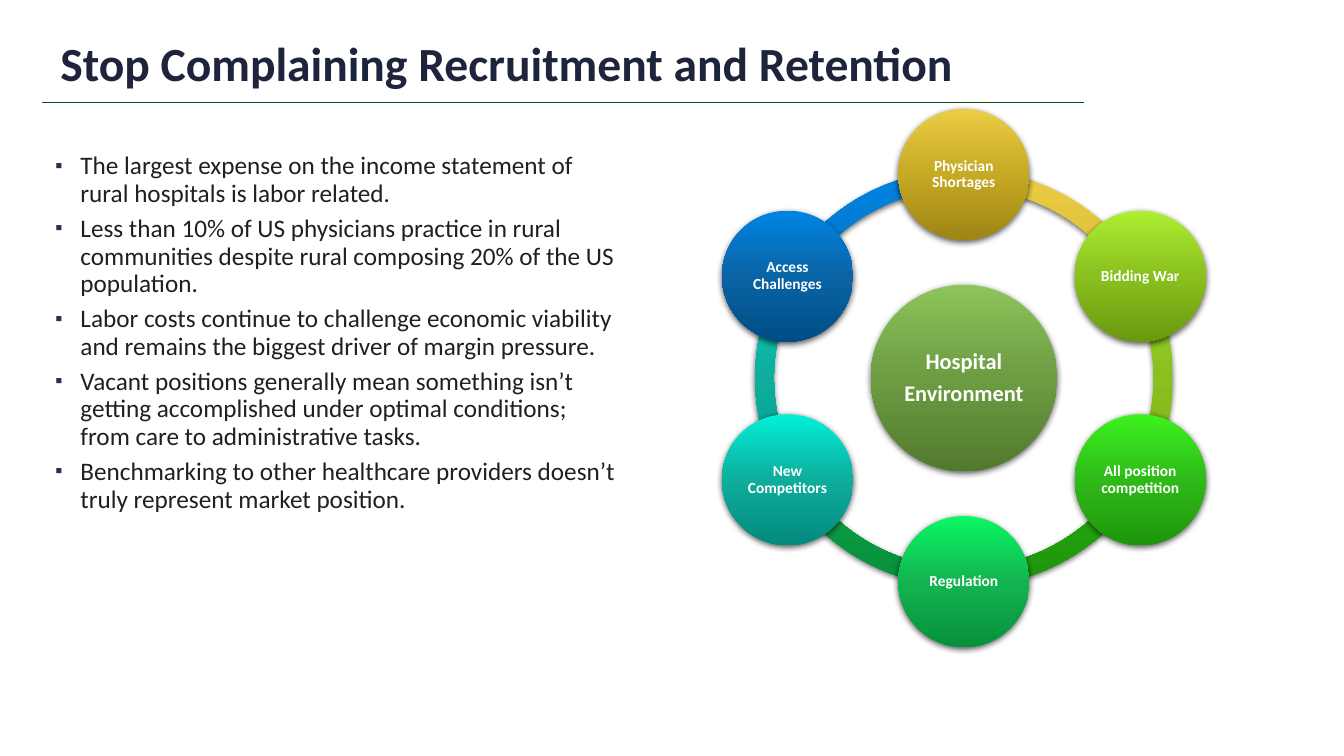
from math import cos, radians, sin
from lxml import etree
from pptx import Presentation, util as u
from pptx.dml.color import RGBColor
from pptx.enum import shapes as sh, text as tx
from pptx.oxml.ns import nsdecls, qn

TITLE = "Stop Complaining Recruitment and Retention"
POINTS = [
    "The largest expense on the income statement of rural hospitals is labor related.",
    "Less than 10% of US physicians practice in rural communities despite rural "
    "composing 20% of the US population.",
    "Labor costs continue to challenge economic viability and remains the biggest "
    "driver of margin pressure.",
    "Vacant positions generally mean something isn’t getting accomplished under "
    "optimal conditions; from care to administrative tasks.",
    "Benchmarking to other healthcare providers doesn’t truly represent market position.",
]
rgb = RGBColor.from_string
HUB = (["Hospital", "Environment"], [rgb("8DC45B"), rgb("6D9C42"), rgb("527A2E")])
# Clockwise from the top: label, gradient from top to bottom
NODES = [
    ("Physician Shortages", [rgb("EBCD45"), rgb("C6A924"), rgb("9E8514")]),
    ("Bidding War", [rgb("AEEE32"), rgb("89C01E"), rgb("6A990F")]),
    ("All position competition", [rgb("3CF21E"), rgb("2FBA18"), rgb("1E950B")]),
    ("Regulation", [rgb("0AF764"), rgb("13B450"), rgb("07903B")]),
    ("New Competitors", [rgb("02F0D8"), rgb("0EAD9C"), rgb("038A7D")]),
    ("Access Challenges", [rgb("0084E3"), rgb("0A64A5"), rgb("004D84")]),
]
NAVY, INK = rgb("1D243C"), rgb("202020")
GREEN, WHITE = rgb("0A4E1F"), rgb("FFFFFF")
BULLET = rgb("263050")
FONT = "Calibri"

WIDE, HIGH = 13.33, 7.5
MID_X, MID_Y = 9.56, HIGH / 2
ORBIT, RING, HUB_SIZE, NODE_SIZE = 2.02, 4.14, 1.85, 1.3
STEP = 360 / len(NODES)

deck = Presentation()
deck.slide_width, deck.slide_height = u.Inches(WIDE), u.Inches(HIGH)
slide = deck.slides.add_slide(deck.slide_layouts[6])


def write(frame, lines, size, color, bold=False, after=0, align=None, bullet=False):
    """Fill a text frame, one paragraph a line, with space between paragraphs."""
    frame.word_wrap = True
    for i, line in enumerate(lines):
        para = frame.add_paragraph() if i else frame.paragraphs[0]
        if bullet:
            mark(para)
        para.line_spacing = 0.9
        if i < len(lines) - 1:
            para.space_after = u.Pt(after)
        if align is not None:
            para.alignment = align
        run = para.add_run()
        run.text = line
        font = run.font
        font.name, font.size, font.bold = FONT, u.Pt(size), bold
        font.color.rgb = color


def mark(para):
    """Add a small square bullet with a hanging indent."""
    props = para._p.get_or_add_pPr()
    hang = u.Inches(0.25)
    props.set("marL", str(hang))
    props.set("indent", str(-hang))
    color = etree.SubElement(props, qn("a:buClr"))
    etree.SubElement(color, qn("a:srgbClr"), val=str(BULLET))
    etree.SubElement(props, qn("a:buSzPct"), val="80000")
    etree.SubElement(props, qn("a:buFont"), typeface=FONT)
    etree.SubElement(props, qn("a:buChar"), char="▪")


def add_box(left, top, width, height):
    return slide.shapes.add_textbox(*map(u.Inches, (left, top, width, height))).text_frame


def add_round(kind, x, y, size, colors):
    """Add a shaded shape with a soft shadow, centred on x, y."""
    shape = slide.shapes.add_shape(
        kind, *map(u.Inches, (x - size / 2, y - size / 2, size, size)))
    shape.line.fill.background()
    shape.fill.gradient()
    shape.fill.gradient_angle = 270
    props = shape._element.spPr
    stops = props.find(".//" + qn("a:gsLst"))
    for stop in list(stops):
        stops.remove(stop)
    for i, color in enumerate(colors):
        stop = etree.SubElement(stops, qn("a:gs"), pos=str(i * 50000))
        etree.SubElement(stop, qn("a:srgbClr"), val=str(color))
    shape.shadow.inherit = False
    props.find(qn("a:effectLst")).append(etree.fromstring(
        f'<a:outerShdw {nsdecls("a")} blurRad="{u.Pt(4.5)}" dist="{u.Pt(1.5)}" '
        'dir="5400000" rotWithShape="0"><a:srgbClr val="000000">'
        '<a:alpha val="63000"/></a:srgbClr></a:outerShdw>'))
    return shape


def add_disc(x, y, size, colors, lines, points):
    frame = add_round(sh.MSO_SHAPE.OVAL, x, y, size, colors).text_frame
    frame.margin_left = frame.margin_right = u.Inches(0.02)
    frame.margin_top = frame.margin_bottom = u.Inches(0.02)
    frame.vertical_anchor = tx.MSO_ANCHOR.MIDDLE
    write(frame, lines, points, WHITE, True, points * 0.35, tx.PP_ALIGN.CENTER)


rule = slide.shapes.add_connector(
    sh.MSO_CONNECTOR.STRAIGHT, *map(u.Inches, (0.42, 1.02, 10.75, 1.02)))
rule.line.color.rgb, rule.line.width = GREEN, u.Pt(1)
etree.SubElement(rule._element.spPr, qn("a:effectLst"))

head = add_box(0.5, 0.3, 10.4, 0.66)
head.vertical_anchor = tx.MSO_ANCHOR.BOTTOM
write(head, [TITLE], 34, NAVY, True)
write(add_box(0.45, 1.47, 5.8, 5.42), POINTS, 18, INK, after=6, bullet=True)

angles = [i * STEP - 90 for i in range(len(NODES))]
for angle, (label, colors) in reversed(list(zip(angles, NODES))):
    arc = add_round(sh.MSO_SHAPE.BLOCK_ARC, MID_X, MID_Y, RING, colors)
    # Arc ends are stored as 0.6 of a degree
    arc.adjustments[0] = angle % 360 * 0.6
    arc.adjustments[1] = (angle + STEP) % 360 * 0.6
    arc.adjustments[2] = 0.045

add_disc(MID_X, MID_Y, HUB_SIZE, HUB[1], HUB[0], 16)
for angle, (label, colors) in zip(angles, NODES):
    turn = radians(angle)
    add_disc(MID_X + ORBIT * cos(turn), MID_Y + ORBIT * sin(turn),
             NODE_SIZE, colors, [label], 11)

deck.save("out.pptx")
